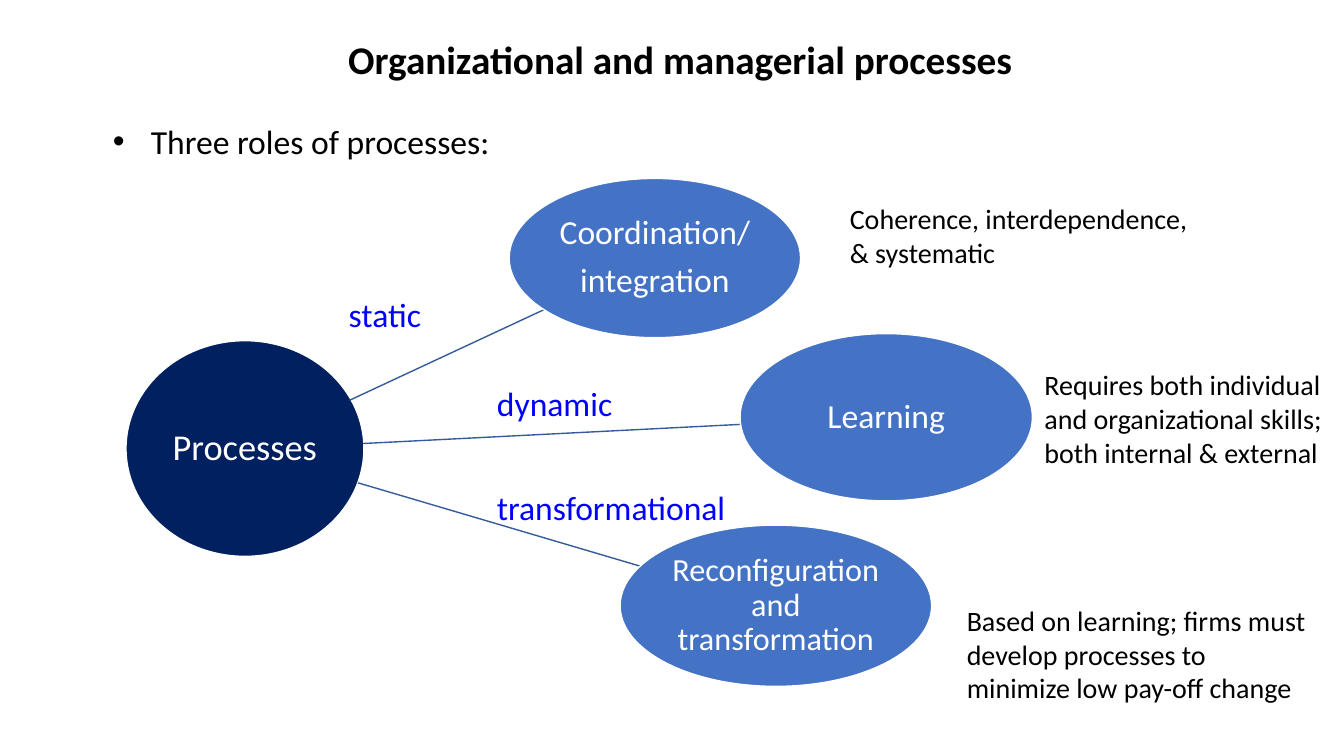
from dataclasses import dataclass

from lxml.etree import SubElement
from pptx import Presentation
from pptx.dml.color import RGBColor
from pptx.enum.shapes import MSO_CONNECTOR, MSO_SHAPE
from pptx.enum.text import MSO_ANCHOR, MSO_AUTO_SIZE, PP_ALIGN
from pptx.oxml.ns import qn
from pptx.util import Inches, Pt


@dataclass(frozen=True)
class Theme:
    """Colours, font and type sizes of the slide."""
    font: str = "Calibri"
    black: str = "000000"
    white: str = "FFFFFF"
    navy: str = "002060"
    blue: str = "4472C4"
    spoke: str = "365B9D"
    label: str = "0000FF"
    title_size: int = 28
    hub_size: int = 26
    body_size: int = 24
    long_role_size: int = 23
    note_size: int = 20


THEME = Theme()
HUB = (1.25, 3.38, 2.36, 2.14)
ROLES = [
    dict(text="Coordination/\nintegration", size=THEME.body_size,
         box=(5.05, 1.77, 2.89, 1.58), spoke=(3.47, 3.97, 5.4, 3.07),
         label="static", label_box=(3.36, 2.87, 6.71, 0.5),
         note="Coherence, interdependence, & systematic",
         note_box=(8.33, 1.95, 3.61, 0.77)),
    dict(text="Learning", size=THEME.body_size,
         box=(7.34, 3.31, 2.9, 1.66), spoke=(3.6, 4.4, 7.35, 4.21),
         label="dynamic", label_box=(4.83, 3.75, 6.71, 0.5),
         note="Requires both individual and organizational skills; both internal & external",
         note_box=(10.26, 3.6, 2.99, 1.11)),
    dict(text="Reconfiguration and transformation", size=THEME.long_role_size,
         box=(6.15, 5.21, 3.09, 1.6), spoke=(3.55, 4.79, 6.36, 5.62),
         label="transformational", label_box=(4.83, 4.78, 6.71, 0.5),
         note="Based on learning; firms must develop processes to minimize low pay-off change",
         note_box=(9.49, 5.94, 3.65, 1.11)),
]


def color(value):
    """Turn a hex string into a colour."""
    return RGBColor.from_string(value)


def write(frame, text, size=THEME.body_size, fill=THEME.black, bold=False,
          align=PP_ALIGN.LEFT, anchor=MSO_ANCHOR.TOP, spacing=1.0, after=0):
    """Fill a text frame with one paragraph per line of text."""
    frame.word_wrap = True
    frame.auto_size = MSO_AUTO_SIZE.NONE
    frame.vertical_anchor = anchor
    for number, line in enumerate(text.split("\n")):
        para = frame.add_paragraph() if number else frame.paragraphs[0]
        para.alignment, para.line_spacing = align, spacing
        para.space_before, para.space_after = Pt(0), Pt(after)
        span = para.add_run()
        span.text = line
        span.font.name, span.font.size, span.font.bold = THEME.font, Pt(size), bold
        span.font.color.rgb = color(fill)


def fill_placeholder(holder, box, text, **style):
    """Move a placeholder to its box and write its text."""
    holder.left, holder.top, holder.width, holder.height = map(Inches, box)
    write(holder.text_frame, text, **style)


def add_text(page, box, text, **style):
    """Add a text box."""
    write(page.shapes.add_textbox(*map(Inches, box)).text_frame, text, **style)


def add_oval(page, box, text, size, fill):
    """Add an oval with centred white text."""
    oval = page.shapes.add_shape(MSO_SHAPE.OVAL, *map(Inches, box))
    oval.shadow.inherit = False
    oval.fill.solid()
    oval.fill.fore_color.rgb = color(fill)
    oval.line.color.rgb = color(THEME.white)
    oval.line.width = Pt(1)
    frame = oval.text_frame
    frame.margin_left = frame.margin_right = Inches(0.02)
    frame.margin_top = frame.margin_bottom = Inches(0.02)
    write(frame, text, size=size, fill=THEME.white, align=PP_ALIGN.CENTER,
          anchor=MSO_ANCHOR.MIDDLE, spacing=0.9, after=round(size * 0.35, 1))


def add_spoke(page, ends):
    """Add a thin line from the hub to a role."""
    spoke = page.shapes.add_connector(MSO_CONNECTOR.STRAIGHT, *map(Inches, ends))
    spoke.line.color.rgb = color(THEME.spoke)
    spoke.line.width = Pt(1)
    SubElement(spoke._element.spPr, qn("a:effectLst"))


def add_role(page, role):
    """Add a role with its spoke, label and note."""
    add_spoke(page, role["spoke"])
    add_oval(page, role["box"], role["text"], role["size"], THEME.blue)
    add_text(page, role["label_box"], role["label"], fill=THEME.label)
    add_text(page, role["note_box"], role["note"], size=THEME.note_size)


def build_processes_slide(deck):
    """Build the slide on the three roles of processes."""
    page = deck.slides.add_slide(deck.slide_layouts[1])
    fill_placeholder(page.shapes.title, (0.08, -0.11, 13.33, 1.45),
                     "Organizational and managerial processes",
                     size=THEME.title_size, bold=True, align=PP_ALIGN.CENTER,
                     anchor=MSO_ANCHOR.MIDDLE, spacing=0.9)
    fill_placeholder(page.placeholders[1], (1.02, 1.15, 6.71, 0.5),
                     "Three roles of processes:")
    add_oval(page, HUB, "Processes", THEME.hub_size, THEME.navy)
    for role in ROLES:
        add_role(page, role)


def main():
    """Create and save the deck."""
    deck = Presentation()
    deck.slide_width, deck.slide_height = Inches(13.33), Inches(7.5)
    build_processes_slide(deck)
    deck.save("out.pptx")


if __name__ == "__main__":
    main()
